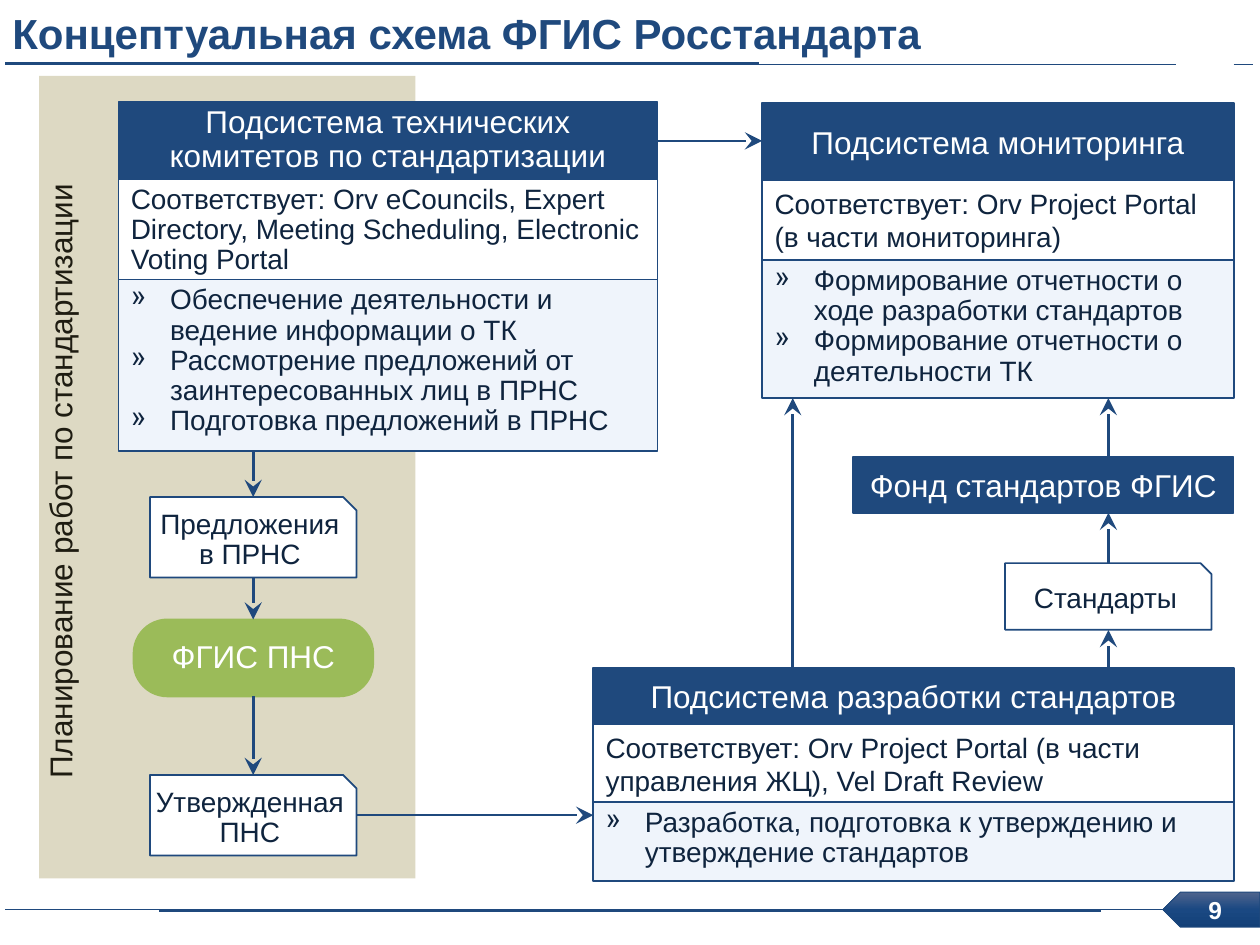
import lxml.etree
import copy
import pptx
import pptx.util
import pptx.dml.color
import pptx.enum.shapes
import pptx.enum.text
import pptx.oxml.ns

Pt = pptx.util.Pt
SHAPE = pptx.enum.shapes.MSO_SHAPE
ALIGN = pptx.enum.text.PP_ALIGN
ANCHOR = pptx.enum.text.MSO_ANCHOR
qn = pptx.oxml.ns.qn
COLORS = {name: pptx.dml.color.RGBColor.from_string(value) for name, value in {
    "navy": "1F497D", "white": "FFFFFF", "pale": "EFF4FB", "ink": "0F243E",
    "sand": "DDD9C3", "brown": "1E1C11", "green": "9BBB59",
    "badge_top": "4F648D", "badge_middle": "1A4882", "badge_bottom": "134077",
}.items()}

presentation = pptx.Presentation()
presentation.slide_width = Pt(720)
presentation.slide_height = Pt(540)
slide = presentation.slides.add_slide(presentation.slide_layouts[6])
shapes = slide.shapes


def add_box(kind, box, paragraphs=(), fill=None, line=None, color="ink", size=16,
            align=ALIGN.CENTER, anchor=ANCHOR.MIDDLE, spacing=None, bullet=None,
            bold=None, insets=(7.2, 3.6, 7.2, 3.6), wrap=True):
    """Add a preset shape, or a text box when kind is None, with its text."""
    box = [Pt(value) for value in box]
    if kind is None:
        shape = shapes.add_textbox(*box)
    else:
        shape = shapes.add_shape(kind, *box)
        shape.shadow.inherit = False
        shape.fill.solid()
        shape.fill.fore_color.rgb = COLORS[fill]
        if line:
            shape.line.color.rgb = COLORS[line]
            shape.line.width = Pt(1)
        else:
            shape.line.fill.background()
    frame = shape.text_frame
    frame.word_wrap = wrap
    frame.vertical_anchor = anchor
    (frame.margin_left, frame.margin_top,
     frame.margin_right, frame.margin_bottom) = [Pt(value) for value in insets]
    for index, text in enumerate(paragraphs):
        paragraph = frame.add_paragraph() if index else frame.paragraphs[0]
        paragraph.text = text
        paragraph.alignment = align
        if spacing:
            paragraph.line_spacing = spacing
        if bullet:
            properties = paragraph._p.get_or_add_pPr()
            properties.set("marL", str(Pt(22.5)))
            properties.set("indent", str(-Pt(22.5)))
            lxml.etree.SubElement(properties, qn("a:buChar")).set("char", bullet)
        paragraph.font.name = "Arial"
        paragraph.font.size = Pt(size)
        paragraph.font.bold = bold
        paragraph.font.color.rgb = COLORS[color]
    return shape


def add_line(x1, y1, x2, y2, width=1.5, arrow=False):
    connector = shapes.add_connector(pptx.enum.shapes.MSO_CONNECTOR.STRAIGHT,
                                     Pt(x1), Pt(y1), Pt(x2), Pt(y2))
    connector.line.color.rgb = COLORS["navy"]
    connector.line.width = Pt(width)
    if arrow:
        tail = lxml.etree.SubElement(connector.line._get_or_add_ln(), qn("a:tailEnd"))
        tail.set("type", "stealth")
        tail.set("w", "lg")
        tail.set("len", "lg")
    lxml.etree.SubElement(connector._element.spPr, qn("a:effectLst"))


# Header and footer rules
for x1, x2, y, width in [(3, 672, 36.7, 0.5), (3, 433.5, 36, 1.5), (705, 716, 36.7, 0.5),
                         (3, 717, 519.8, 0.5), (91, 629, 520.5, 1.5)]:
    add_line(x1, y, x2, y, width)

# Page number badge
badge_box = (664.5, 509.8, 55.5, 20)
badge = add_box(SHAPE.PENTAGON, badge_box, fill="navy", line="navy")
badge.line.width = Pt(0.5)
badge._element.spPr.find(qn("a:xfrm")).set("flipH", "1")
badge.fill.gradient()
badge.fill.gradient_angle = 270
stop_list = badge._element.spPr.find(qn("a:gradFill")).find(qn("a:gsLst"))
stop_list.insert(1, copy.deepcopy(stop_list[0]))
for stop, position, name in zip(badge.fill.gradient_stops, (0, 0.5, 1),
                                ("badge_top", "badge_middle", "badge_bottom")):
    stop.position = position
    stop.color.rgb = COLORS[name]
add_box(None, badge_box, ["9"], color="white", size=14, bold=True,
        insets=(7.2, 3.6, 2.9, 3.6))

add_box(None, (0, 0, 717, 37), ["Концептуальная схема ФГИС Росстандарта"],
        color="navy", size=24, bold=True, align=ALIGN.LEFT)

# Planning zone
add_box(SHAPE.RECTANGLE, (22.3, 43.4, 215, 458.6), fill="sand")
zone_label = add_box(None, (-144.7, 258.5, 358, 29), ["Планирование работ по стандартизации"],
                     color="brown", size=18, align=ALIGN.LEFT, anchor=ANCHOR.TOP, wrap=False)
zone_label.rotation = 270

# Subsystems: left, width, edges of the three rows, title and match spacing, texts
subsystems = [
    (67.7, 308, (58.5, 102.2, 159.8, 258), 0.9, 0.9,
     "Подсистема технических комитетов по стандартизации",
     "Соответствует: Orv eCouncils, Expert Directory, Meeting Scheduling, "
     "Electronic Voting Portal",
     ["Обеспечение деятельности и ведение информации о ТК",
      "Рассмотрение предложений от заинтересованных лиц в ПРНС",
      "Подготовка предложений в ПРНС"]),
    (435.5, 269.5, (59, 103, 148.7, 227.5), None, None,
     "Подсистема мониторинга",
     "Соответствует: Orv Project Portal (в части мониторинга)",
     ["Формирование отчетности о ходе разработки стандартов",
      "Формирование отчетности о деятельности ТК"]),
    (339, 366, (381.8, 413.8, 458.4, 503.6), None, None,
     "Подсистема разработки стандартов",
     "Соответствует: Orv Project Portal (в части управления ЖЦ), Vel Draft Review",
     ["Разработка, подготовка к утверждению и утверждение стандартов"]),
]
for left, width, edges, title_spacing, match_spacing, title, match, tasks in subsystems:
    title_box, match_box, task_box = [(left, top, width, bottom - top)
                                      for top, bottom in zip(edges, edges[1:])]
    add_box(SHAPE.RECTANGLE, title_box, [title], "navy", "navy", "white", 18,
            spacing=title_spacing)
    add_box(SHAPE.RECTANGLE, match_box, [match], "white", "navy", align=ALIGN.LEFT,
            anchor=ANCHOR.TOP, spacing=match_spacing)
    add_box(SHAPE.RECTANGLE, task_box, tasks, "pale", "navy", align=ALIGN.LEFT,
            anchor=ANCHOR.TOP, spacing=0.9, bullet="»")

add_box(SHAPE.RECTANGLE, (487.4, 261, 217.6, 32), ["Фонд стандартов ФГИС"],
        "navy", "navy", "white", 18)
planning_system = add_box(SHAPE.ROUNDED_RECTANGLE, (76.3, 354, 137, 44), ["ФГИС ПНС"],
                          "green", "green", "white", 18, spacing=0.9)
planning_system.adjustments[0] = 0.44

# Documents
for left, top, height, text in [(85.7, 284, 46, "Предложения в ПРНС"),
                                (85.7, 442.8, 46, "Утвержденная ПНС"),
                                (574.3, 321.8, 38, "Стандарты")]:
    add_box(SHAPE.SNIP_1_RECTANGLE, (left, top, 118, height), [text], "white", "navy",
            spacing=0.9, insets=(2.8, 2.8, 2.8, 2.8))

# Flow arrows
for x, y1, y2 in [(144.7, 258, 284), (144.7, 330, 354), (144.7, 398, 442.8),
                  (633.4, 381.8, 360), (633.4, 321.8, 293), (633.4, 261, 227.5),
                  (453, 381.8, 227.5)]:
    add_line(x, y1, x, y2, arrow=True)
for y, x1, x2 in [(80.5, 375.7, 435.5), (465.8, 203.7, 339)]:
    add_line(x1, y, x2, y, arrow=True)

presentation.save("out.pptx")
